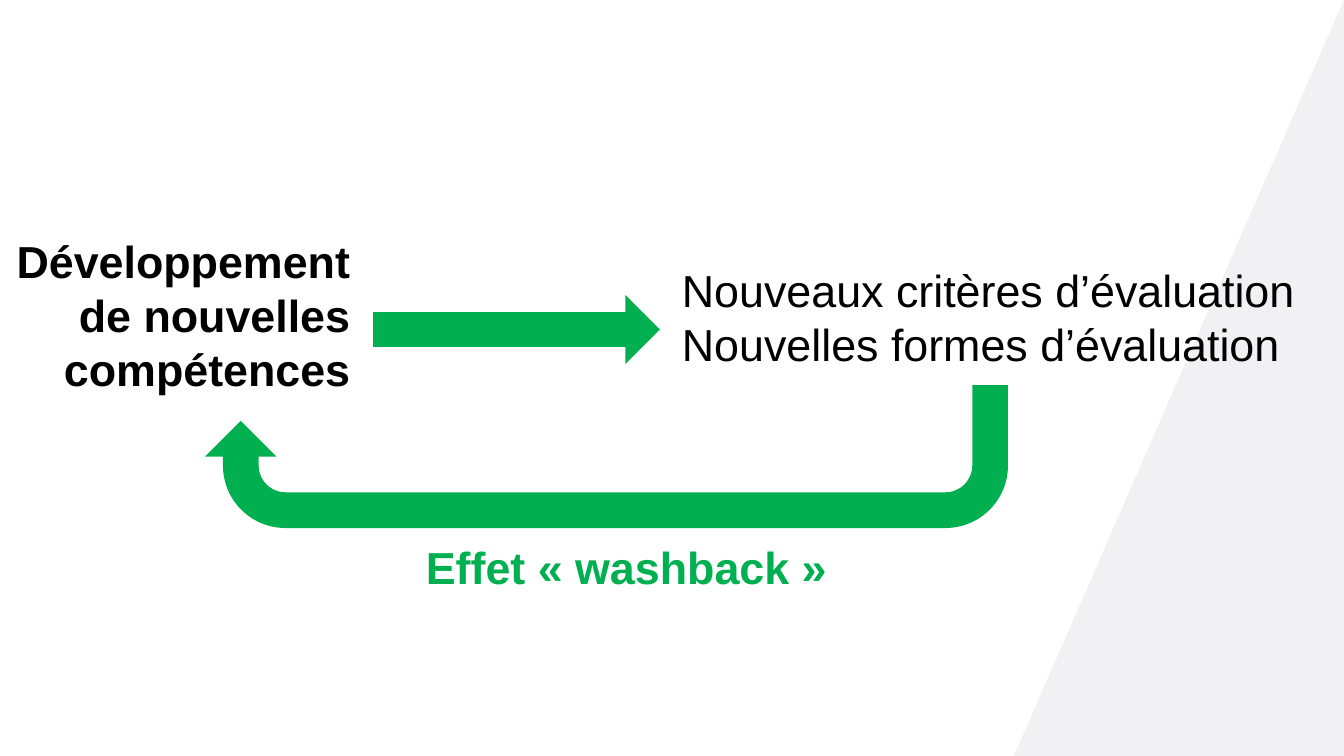
import pptx
import pptx.dml.color
import pptx.enum.shapes
import pptx.enum.text
import pptx.util

SHAPE = pptx.enum.shapes.MSO_SHAPE
ALIGN = pptx.enum.text.PP_ALIGN
GREEN, BLACK, WHITE, PALE = "00B050", "000000", "FFFFFF", "F1F1F3"


def px(length):
    return pptx.util.Emu(round(length * 914400 / 100.8))


def colour(code):
    return pptx.dml.color.RGBColor.from_string(code)


class Page:
    """Draws styled elements on one slide."""

    font_name = "Arial"
    font_size = pptx.util.Pt(32)

    def __init__(self, slide):
        self.slide = slide

    def shape(self, preset, left, top, width, height, fill, rotation=0, mirrored=False):
        shape = self.slide.shapes.add_shape(preset, px(left), px(top), px(width), px(height))
        shape.shadow.inherit = False
        shape.fill.solid()
        shape.fill.fore_color.rgb = colour(fill)
        shape.line.fill.background()
        shape.rotation = rotation
        if mirrored:
            shape._element.spPr.xfrm.set("flipH", "1")
        return shape

    def text(self, left, top, width, height, lines, ink, bold=False):
        box = self.slide.shapes.add_textbox(px(left), px(top), px(width), px(height))
        self.label(box, lines, ink, bold)

    def label(self, shape, lines, ink, bold=False, align=ALIGN.LEFT):
        frame = shape.text_frame
        frame.word_wrap = False
        frame.auto_size = pptx.enum.text.MSO_AUTO_SIZE.SHAPE_TO_FIT_TEXT
        frame.text = lines
        for paragraph in frame.paragraphs:
            paragraph.alignment = align
            paragraph.font.name = self.font_name
            paragraph.font.size = self.font_size
            paragraph.font.bold = bold
            paragraph.font.color.rgb = colour(ink)


def main():
    deck = pptx.Presentation()
    deck.slide_width, deck.slide_height = px(1344), px(756)
    page = Page(deck.slides.add_slide(deck.slide_layouts[6]))

    page.shape(SHAPE.RIGHT_TRIANGLE, 1014, 0, 330, 756, PALE, mirrored=True)
    page.text(672, 258, 638, 119,
              "Nouveaux critères d’évaluation\nNouvelles formes d’évaluation", BLACK)
    page.shape(SHAPE.U_TURN_ARROW, 205, 385, 803, 143, GREEN, rotation=180)
    page.text(416, 535, 424, 64, "Effet « washback »", GREEN, bold=True)
    page.shape(SHAPE.RIGHT_ARROW, 54, 295, 606, 69, GREEN)
    skills = page.shape(SHAPE.RECTANGLE, 4, 228, 369, 173, WHITE)
    page.label(skills, "Développement \vde nouvelles \vcompétences ", BLACK,
               bold=True, align=ALIGN.RIGHT)

    deck.save("out.pptx")


if __name__ == "__main__":
    main()
